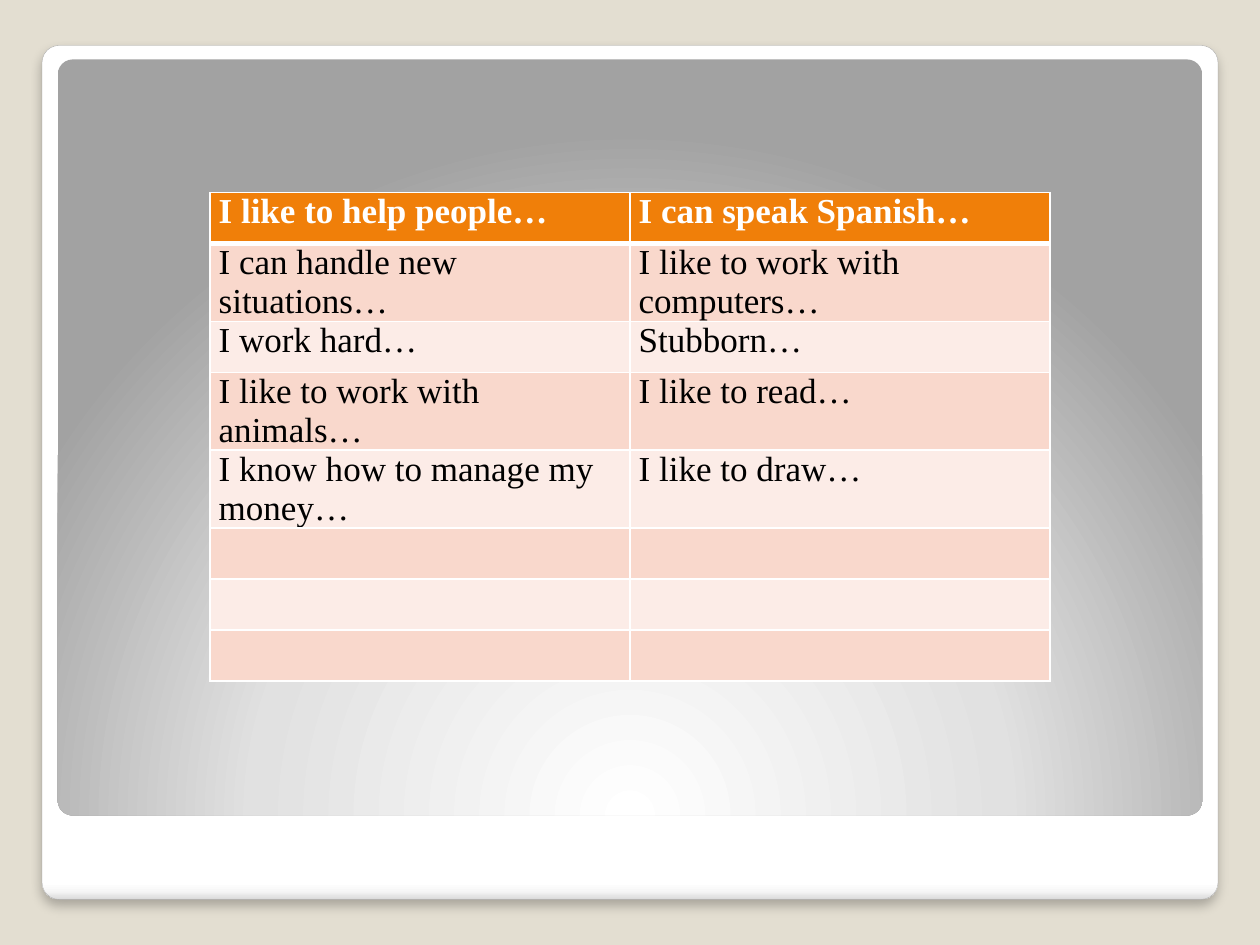
import pptx
import pptx.util
import pptx.oxml
import pptx.oxml.ns
import pptx.dml.color
import pptx.enum.shapes
from dataclasses import dataclass

Pt = pptx.util.Pt
Rgb = pptx.dml.color.RGBColor.from_string
NS = pptx.oxml.ns.nsdecls("a")


@dataclass(frozen=True)
class Theme:
    """Colours, font and type size of the slide."""
    back: str = "E3DED1"
    edge: str = "A4A4A4"
    shade: str = "000000"
    head: str = "F07F09"
    bands: tuple = ("F9D8CC", "FCECE7")
    light: str = "FFFFFF"
    dark: str = "000000"
    card: tuple = ((0, "FFFFFF"), (98, "FFFFFF"), (99, "F7F7F7"), (100, "DADADA"))
    glow: tuple = ((0, "FFFFFF"), (55, "E1E1E1"), (100, "A2A2A2"))
    font: str = "Times New Roman"
    size: int = 20


class Deck:
    """Holds the theme and the current slide, and draws its elements."""

    def __init__(self, theme):
        self.theme = theme
        self.prs = pptx.Presentation()
        self.prs.slide_width, self.prs.slide_height = Pt(720), Pt(540)
        self.slide = self.prs.slides.add_slide(self.prs.slide_layouts[6])
        fill = self.slide.background.fill
        fill.solid()
        fill.fore_color.rgb = Rgb(theme.back)

    def panel(self, box, stops, flow, edge=None):
        """Draw a rounded panel with a gradient, and a shadow if it has an edge."""
        kind = pptx.enum.shapes.MSO_SHAPE.ROUNDED_RECTANGLE
        shape = self.slide.shapes.add_shape(kind, *map(Pt, box))
        shape.adjustments[0] = 0.02
        shape.shadow.inherit = False
        marks = "".join(
            f'<a:gs pos="{pos * 1000}"><a:srgbClr val="{tone}"/></a:gs>'
            for pos, tone in stops)
        grad = f"<a:gradFill {NS}><a:gsLst>{marks}</a:gsLst>{flow}</a:gradFill>"
        props = shape._element.spPr
        props.insert(2, pptx.oxml.parse_xml(grad))
        if not edge:
            shape.line.fill.background()
            return
        shape.line.color.rgb = Rgb(edge)
        shape.line.width = Pt(0.16)
        cast = (f'<a:outerShdw {NS} blurRad="{Pt(6)}" dist="{Pt(4)}" dir="5400000">'
                f'<a:srgbClr val="{self.theme.shade}"><a:alpha val="25000"/>'
                '</a:srgbClr></a:outerShdw>')
        props.find(pptx.oxml.ns.qn("a:effectLst")).append(pptx.oxml.parse_xml(cast))

    def rule(self, cell, side, width):
        """Draw one border of a cell."""
        props = cell._tc.get_or_add_tcPr()
        props.append(pptx.oxml.parse_xml(
            f'<a:ln{side} {NS} w="{Pt(width)}"><a:solidFill>'
            f'<a:srgbClr val="{self.theme.light}"/></a:solidFill></a:ln{side}>'))

    def cell(self, cell, text, row):
        """Fill and format one cell."""
        look, head = self.theme, row == 0
        for side in "LRTB":
            thick = (head and side == "B") or (row == 1 and side == "T")
            self.rule(cell, side, 3 if thick else 1)
        cell.fill.solid()
        cell.fill.fore_color.rgb = Rgb(look.head if head else look.bands[(row - 1) % 2])
        cell.margin_left = cell.margin_right = Pt(5)
        cell.margin_top = cell.margin_bottom = 0
        cell.text = text
        font = cell.text_frame.paragraphs[0].font
        font.name, font.size, font.bold = look.font, Pt(look.size), head
        font.color.rgb = Rgb(look.light if head else look.dark)

    def table(self, box, rows):
        """Draw a banded table with equal rows."""
        frame = self.slide.shapes.add_table(len(rows), len(rows[0]), *map(Pt, box))
        for i, row in enumerate(rows):
            frame.table.rows[i].height = Pt(box[3] / len(rows))
            for j, text in enumerate(row):
                self.cell(frame.table.cell(i, j), text, i)


def main():
    """Build and save the slide."""
    theme = Theme()
    deck = Deck(theme)
    deck.panel((24, 26, 672, 488), theme.card,
               '<a:lin ang="5400000" scaled="0"/>', theme.edge)
    deck.panel((33, 34, 654, 432), theme.glow,
               '<a:path path="circle"><a:fillToRect l="50000" t="175000" '
               'r="50000" b="-75000"/></a:path>')
    rows = [
        ("I like to help people…", "I can speak Spanish…"),
        ("I can handle new situations…", "I like to work with computers…"),
        ("I work hard…", "Stubborn…"),
        ("I like to work with animals…", "I like to read…"),
        ("I know how to manage my money…", "I like to draw…"),
    ] + [("", "")] * 3
    deck.table((120, 110, 480, 233.6), rows)
    deck.prs.save("out.pptx")


if __name__ == "__main__":
    main()
